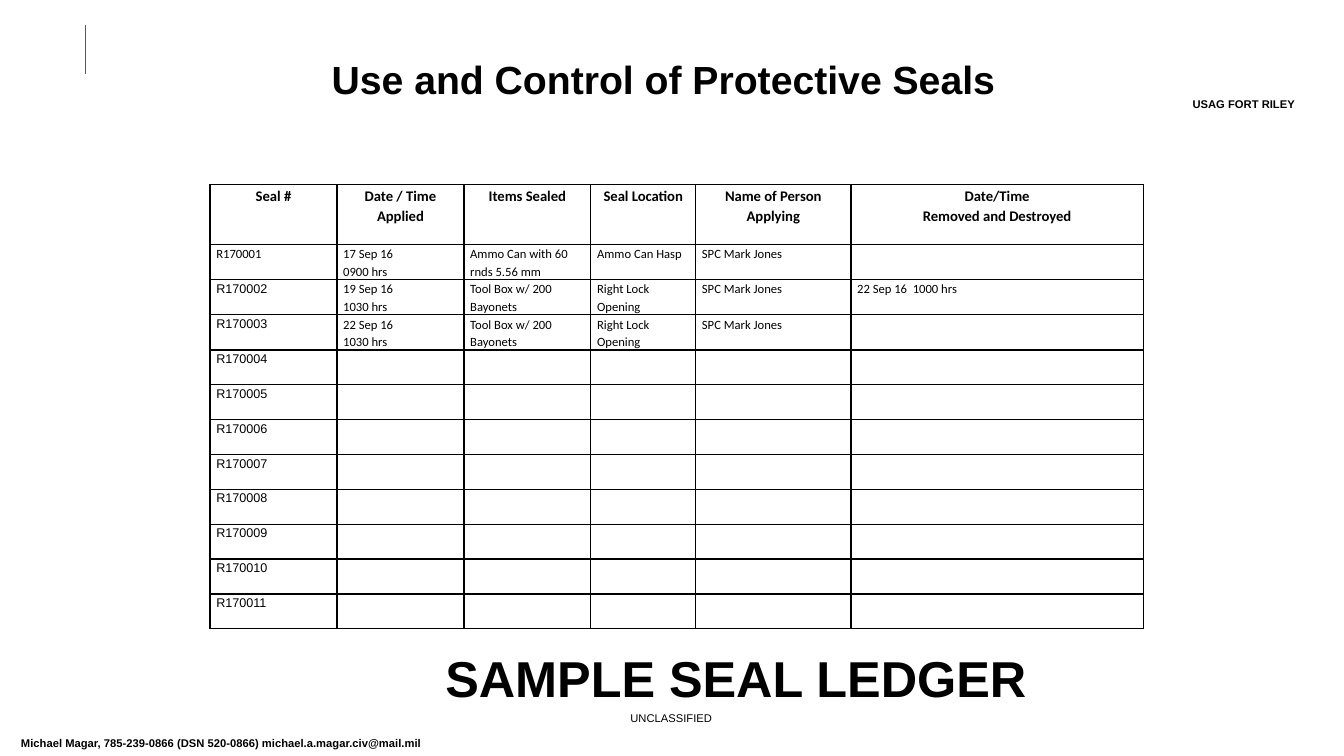
import pptx
import pptx.dml.color
import pptx.enum.shapes
import pptx.enum.text
import pptx.util
from lxml import etree
from pptx.oxml import parse_xml

Pt = pptx.util.Pt
BLACK = pptx.dml.color.RGBColor(0x00, 0x00, 0x00)
GRAY = pptx.dml.color.RGBColor(0x59, 0x59, 0x59)
CENTER = pptx.enum.text.PP_ALIGN.CENTER
LEFT = pptx.enum.text.PP_ALIGN.LEFT
DRAWING = "http://schemas.openxmlformats.org/drawingml/2006/main"

# text, (left, top, width, height), size, bold, alignment, wrap
TEXTS = [
    ("Michael Magar, 785-239-0866 (DSN 520-0866) michael.a.magar.civ@mail.mil",
     (7.9, 522.7, 597.6, 17.3), 8, True, LEFT, True),
    ("UNCLASSIFIED", (353.5, 504.7, 252, 17.3), 8, False, CENTER, True),
    ("USAG FORT RILEY", (825.1, 66.2, 126.7, 17.3), 8, True, CENTER, True),
    ("SAMPLE SEAL LEDGER", (311, 458.6, 434.2, 51.1), 36, True, LEFT, False),
    ("Use and Control of Protective Seals", (113.8, 36, 720, 36), 28, True, CENTER, True),
]

HEADERS = ["Seal #", "Date / Time\nApplied", "Items Sealed", "Seal Location",
           "Name of Person Applying", "Date/Time\nRemoved and Destroyed"]
SEAL_COUNT = 11
ENTRIES = [
    ["17 Sep 16\n0900 hrs", "Ammo Can with 60 rnds 5.56 mm", "Ammo Can Hasp", "SPC Mark Jones"],
    ["19 Sep 16\n1030 hrs", "Tool Box w/ 200 Bayonets", "Right Lock Opening",
     "SPC Mark Jones", "22 Sep 16  1000 hrs"],
    ["22 Sep 16\n1030 hrs", "Tool Box w/ 200 Bayonets", "Right Lock Opening", "SPC Mark Jones"],
]
TABLE_LEFT, TABLE_TOP = 150, 131.8
COLUMN_WIDTHS = [90.7, 90.7, 90.7, 74.9, 110.9, 208.8]
HEADER_HEIGHT, ROW_HEIGHT = 42.8, 24.9


def write(text_frame, text, alignment, line_spacing=None, **font_format):
    for index, line in enumerate(text.split("\n")):
        paragraph = text_frame.add_paragraph() if index else text_frame.paragraphs[0]
        paragraph.alignment = alignment
        paragraph.line_spacing = line_spacing
        run = paragraph.add_run()
        run.text = line
        run.font.color.rgb = BLACK
        for name, value in font_format.items():
            setattr(run.font, name, value)


def format_cell(cell):
    """Give the cell thin black borders, no fill and narrow margins."""
    for name, margin in {"left": 4.5, "right": 4.5, "top": 0, "bottom": 0}.items():
        setattr(cell, f"margin_{name}", Pt(margin))
    properties = cell._tc.get_or_add_tcPr()
    for side in "LRTB":
        properties.append(parse_xml(
            f'<a:ln{side} xmlns:a="{DRAWING}" w="{Pt(1)}"><a:solidFill>'
            f'<a:srgbClr val="{BLACK}"/></a:solidFill></a:ln{side}>'))
    cell.fill.background()


def add_ledger(slide):
    rows = [HEADERS]
    for number in range(SEAL_COUNT):
        entry = ENTRIES[number] if number < len(ENTRIES) else []
        rows.append([f"R{170001 + number}"] + entry)
    heights = [HEADER_HEIGHT] + [ROW_HEIGHT] * SEAL_COUNT
    table = slide.shapes.add_table(
        len(rows), len(COLUMN_WIDTHS), Pt(TABLE_LEFT), Pt(TABLE_TOP),
        Pt(sum(COLUMN_WIDTHS)), Pt(sum(heights))).table
    table.first_row = table.horz_banding = False
    for column, width in zip(table.columns, COLUMN_WIDTHS):
        column.width = Pt(width)
    for row, height in zip(table.rows, heights):
        row.height = Pt(height)
    for cell in table.iter_cells():
        format_cell(cell)
    for row_index, texts in enumerate(rows):
        header = row_index == 0
        for column_index, text in enumerate(texts):
            arial = row_index > 1 and column_index == 0
            write(table.cell(row_index, column_index).text_frame, text,
                  CENTER if header else LEFT, 1.15,
                  name="Arial" if arial else "Calibri",
                  size=Pt(10.5 if header else 9), bold=header)


def main():
    presentation = pptx.Presentation()
    presentation.slide_width, presentation.slide_height = Pt(960), Pt(540)
    slide = presentation.slides.add_slide(presentation.slide_layouts[6])

    rule = slide.shapes.add_connector(
        pptx.enum.shapes.MSO_CONNECTOR.STRAIGHT, Pt(61.2), Pt(18), Pt(61.2), Pt(52.6))
    rule.line.color.rgb = GRAY
    rule.line.width = Pt(0.75)
    etree.SubElement(rule._element.spPr, f"{{{DRAWING}}}effectLst")

    add_ledger(slide)
    for text, box, size, bold, alignment, wrap in TEXTS:
        text_frame = slide.shapes.add_textbox(*map(Pt, box)).text_frame
        text_frame.word_wrap = wrap
        write(text_frame, text, alignment, name="Arial", size=Pt(size), bold=bold)

    presentation.save("out.pptx")


if __name__ == "__main__":
    main()
